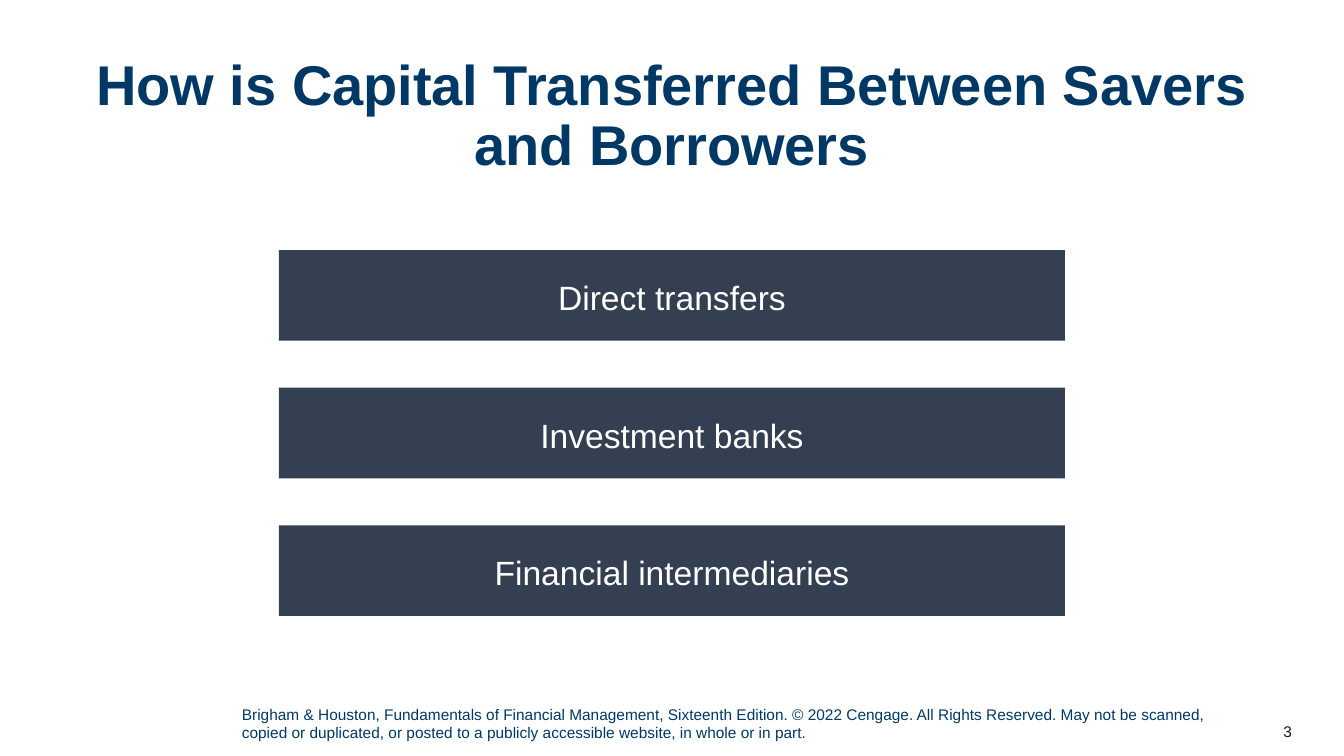
from pptx import Presentation
from pptx import util as u
from pptx.dml.color import RGBColor
from pptx.enum import shapes, text

EMU_PER_PX = 914400 / 100.8
NAVY, SLATE, WHITE, INK = "003865", "343F52", "FFFFFF", "181717"
TRANSFER_WAYS = ["Direct transfers", "Investment banks", "Financial intermediaries"]
COPYRIGHT = (
    "Brigham & Houston, Fundamentals of Financial Management, Sixteenth Edition. "
    "© 2022 Cengage. All Rights Reserved. May not be scanned, copied or duplicated, "
    "or posted to a publicly accessible website, in whole or in part."
)


def px(length):
    return u.Emu(round(length * EMU_PER_PX))


def color(hex_string):
    return RGBColor.from_string(hex_string)


def write(shape, words, size, hex_string, align, anchor, bold=False):
    frame = shape.text_frame
    frame.word_wrap = True
    frame.vertical_anchor = anchor
    frame.text = words
    paragraph = frame.paragraphs[0]
    paragraph.alignment = align
    font = paragraph.runs[0].font
    font.name, font.size, font.bold = "Arial", u.Pt(size), bold
    font.color.rgb = color(hex_string)
    return paragraph


def add_text(slide, box, *style, **options):
    textbox = slide.shapes.add_textbox(*map(px, box))
    return write(textbox, *style, **options)


def add_title(slide, box):
    paragraph = add_text(
        slide, box, "How is Capital Transferred Between Savers and Borrowers",
        40, NAVY, text.PP_ALIGN.CENTER, text.MSO_ANCHOR.TOP, bold=True)
    paragraph.line_spacing = 0.9


def add_bars(slide, box, gap=47):
    """Stack equal bars that fill the box."""
    left, top, width, height = box
    count = len(TRANSFER_WAYS)
    bar_height = (height - gap * (count - 1)) / count
    for index, way in enumerate(TRANSFER_WAYS):
        bar_top = top + index * (bar_height + gap)
        bar = slide.shapes.add_shape(
            shapes.MSO_SHAPE.RECTANGLE, px(left), px(bar_top), px(width), px(bar_height))
        bar.shadow.inherit = False
        bar.fill.solid()
        bar.fill.fore_color.rgb = color(SLATE)
        bar.line.fill.background()
        write(bar, way, 24, WHITE, text.PP_ALIGN.CENTER, text.MSO_ANCHOR.MIDDLE)
        bar.text_frame.margin_top = px(8)


def add_footer(slide, box):
    """Copyright line on the left, page number at the right end."""
    left, top, width, height = box
    number_width = 81
    add_text(slide, (left, top, 988, height), COPYRIGHT,
             11, NAVY, text.PP_ALIGN.LEFT, text.MSO_ANCHOR.TOP)
    add_text(slide, (left + width - number_width, top + 11, number_width, 40), "3",
             11, INK, text.PP_ALIGN.RIGHT, text.MSO_ANCHOR.MIDDLE)


def main():
    presentation = Presentation()
    presentation.slide_width, presentation.slide_height = px(1344), px(756)
    slide = presentation.slides.add_slide(presentation.slide_layouts[6])
    add_title(slide, (52, 52, 1239, 134))
    add_bars(slide, (279, 250, 786, 366))
    add_footer(slide, (232, 700, 1070, 47))
    presentation.save("out.pptx")


if __name__ == "__main__":
    main()
